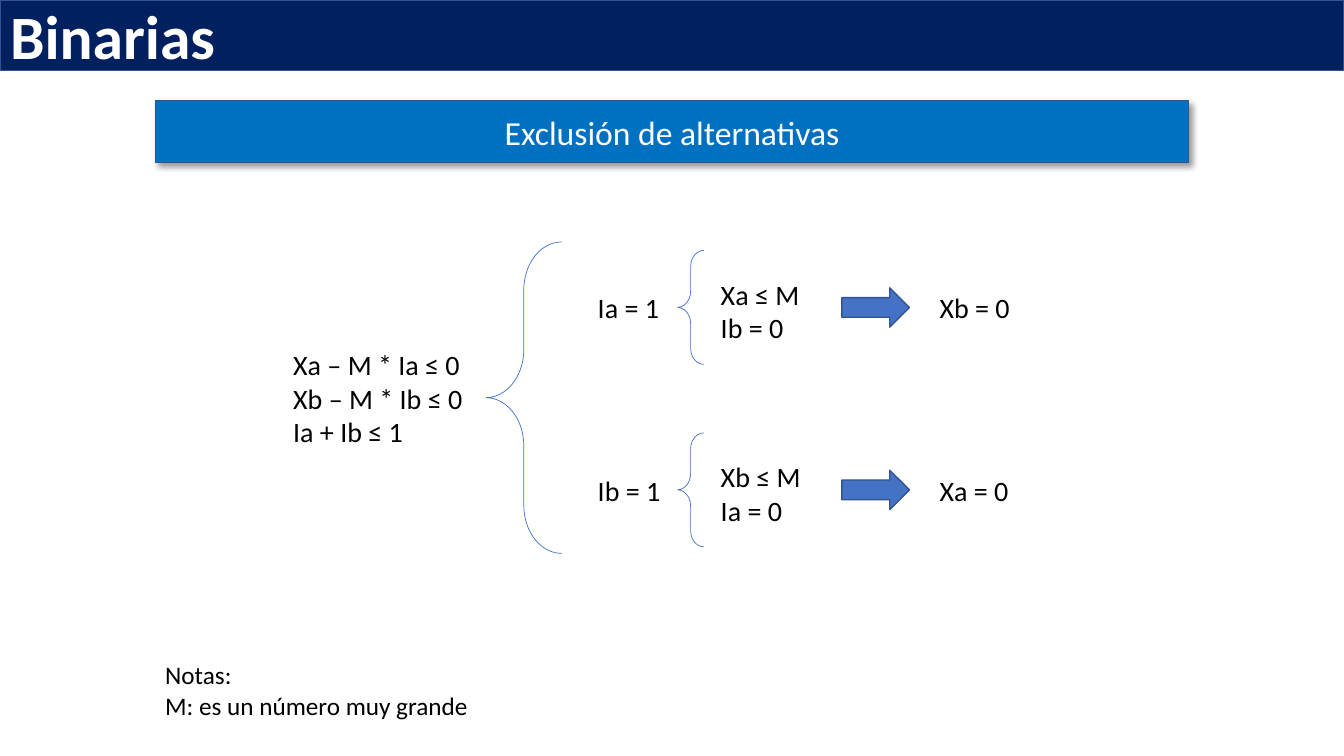
"""Build the slide on excluding alternatives with binary variables."""
from lxml import etree
from pptx import Presentation, util as u
from pptx.dml.color import RGBColor
from pptx.enum import shapes, text
from pptx.oxml import ns

WIDTH, HEIGHT = 13.33, 7.5
MARGIN = 1.54
FIRST_ROW, ROW_STEP = 3.05, 1.81
BLUE, EDGE = "4472C4", "325491"


def write(shape, lines, size, color="000000", align=text.PP_ALIGN.LEFT,
          anchor=text.MSO_ANCHOR.MIDDLE):
    frame = shape.text_frame
    frame.text = "\n".join(lines)
    frame.word_wrap = True
    frame.vertical_anchor = anchor
    for paragraph in frame.paragraphs:
        paragraph.alignment = align
        paragraph.font.name = "Calibri"
        paragraph.font.size = u.Pt(size)
        paragraph.font.color.rgb = RGBColor.from_string(color)


def draw(kind, box, line, weight, fill=None):
    shape = slide.shapes.add_shape(kind, *map(u.Inches, box))
    shape.shadow.inherit = False
    shape.line.color.rgb = RGBColor.from_string(line)
    shape.line.width = u.Pt(weight)
    if fill:
        shape.fill.solid()
        shape.fill.fore_color.rgb = RGBColor.from_string(fill)
    else:
        shape.fill.background()
    return shape


presentation = Presentation()
presentation.slide_width = u.Inches(WIDTH)
presentation.slide_height = u.Inches(HEIGHT)
slide = presentation.slides.add_slide(presentation.slide_layouts.get_by_name("Title Only"))

title = slide.shapes.title
title.left, title.top, title.width, title.height = map(u.Inches, (0, 0, WIDTH, 0.7))
title.fill.solid()
title.fill.fore_color.rgb = RGBColor.from_string("002060")
title.line.color.rgb = RGBColor.from_string(EDGE)
title.line.width = u.Pt(1)
write(title, ["Binarias"], 44, "FFFFFF")
title.text_frame.auto_size = text.MSO_AUTO_SIZE.NONE
title.text_frame.paragraphs[0].font.bold = True

banner = draw(shapes.MSO_SHAPE.RECTANGLE, (MARGIN, 1, WIDTH - 2 * MARGIN, 0.61), EDGE, 1, "0070C0")
write(banner, ["Exclusión de alternativas"], 24, "FFFFFF", text.PP_ALIGN.CENTER)
effects = banner._element.spPr.find(ns.qn("a:effectLst"))
shadow = etree.SubElement(effects, ns.qn("a:outerShdw"), blurRad=str(u.Pt(4)), dist=str(u.Pt(3)),
                          dir="2700000", algn="tl", rotWithShape="0")
shadow_color = etree.SubElement(shadow, ns.qn("a:srgbClr"), val="000000")
etree.SubElement(shadow_color, ns.qn("a:alpha"), val="40000")

labels = [
    ((2.81, 3.6, 2.1, 0.7), ["Xa – M * Ia ≤ 0", "Xb – M * Ib ≤ 0", "Ia + Ib ≤ 1"], 20),
    ((MARGIN, 6.49, 6.81, 0.71), ["Notas:", "M: es un número muy grande"], 18),
]
braces = [((4.82, 2.4, 0.75, 3.09), 0.637)]

for row, (chosen, excluded) in enumerate(["ab", "ba"]):
    middle = FIRST_ROW + row * ROW_STEP
    labels += [
        ((5.83, middle - 0.35, 1.02, 0.7), [f"I{chosen} = 1"], 20),
        ((7.05, middle - 0.35, 1.08, 0.77), [f"X{chosen} ≤ M", f"I{excluded} = 0"], 20),
        ((9.22, middle - 0.35, 1.02, 0.7), [f"X{excluded} = 0"], 20),
    ]
    braces.append(((6.72, middle - 0.565, 0.26, 1.13), 0.616))
    draw(shapes.MSO_SHAPE.RIGHT_ARROW, (8.35, middle - 0.195, 0.67, 0.39), EDGE, 1, BLUE)

for box, curve in braces:
    brace = draw(shapes.MSO_SHAPE.LEFT_BRACE, box, BLUE, 0.5)
    brace.adjustments[0] = curve

for box, lines, size in labels:
    write(slide.shapes.add_textbox(*map(u.Inches, box)), lines, size)

presentation.save("out.pptx")
